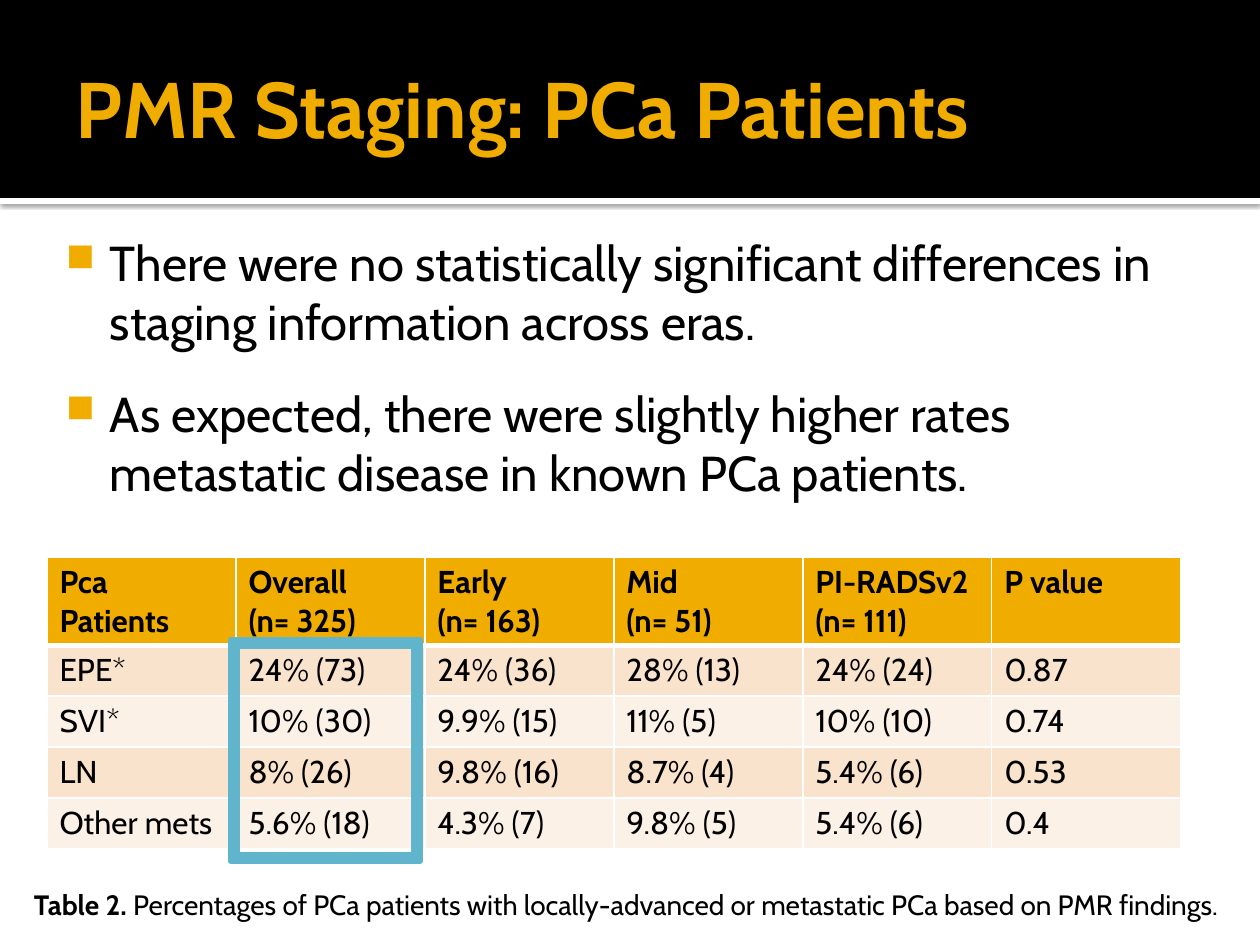
from dataclasses import dataclass

from lxml import etree
from pptx import Presentation
from pptx import util as u
from pptx.dml.color import RGBColor
from pptx.enum import shapes, text
from pptx.oxml.ns import qn

PX = u.Inches(1) // 126


@dataclass(frozen=True)
class Theme:
    font: str = "Cabin"
    black: str = "000000"
    white: str = "FFFFFF"
    gold: str = "F0AD00"
    blue: str = "60B5CC"
    bands: tuple = ("F9E3CC", "FCF1E7")
    title: int = 45
    body: int = 28
    cell: int = 18
    caption: int = 16


T = Theme()

BULLETS = [
    "There were no statistically significant differences in staging information across eras.",
    "As expected, there were slightly higher rates metastatic disease in known PCa patients.",
]
STAGING = [
    ["Pca Patients", "Overall\n(n= 325)", "Early\n(n= 163)", "Mid\n(n= 51)",
     "PI-RADSv2 (n= 111)", "P value"],
    ["EPE*", "24% (73)", "24% (36)", "28% (13)", "24% (24)", "0.87"],
    ["SVI*", "10% (30)", "9.9% (15)", "11% (5)", "10% (10)", "0.74"],
    ["LN", "8% (26)", "9.8% (16)", "8.7% (4)", "5.4% (6)", "0.53"],
    ["Other mets", "5.6% (18)", "4.3% (7)", "9.8% (5)", "5.4% (6)", "0.4"],
]


def px(*values):
    return [v * PX for v in values]


def rgb(color):
    return RGBColor.from_string(color)


def sub(parent, tag, **attrs):
    return etree.SubElement(parent, qn(tag), {k: str(v) for k, v in attrs.items()})


def style(r, size, color=T.black, bold=False):
    r.font.name = T.font
    r.font.size = u.Pt(size)
    r.font.bold = bold
    r.font.color.rgb = rgb(color)


def add_shape(s, kind, box, color):
    sp = s.shapes.add_shape(kind, *px(*box))
    sp.shadow.inherit = False
    sp.fill.solid()
    sp.fill.fore_color.rgb = rgb(color)
    sp.line.fill.background()
    return sp


def add_text_box(s, box, margins, anchor=text.MSO_ANCHOR.TOP):
    """Margins are left, top, right, bottom."""
    tf = s.shapes.add_textbox(*px(*box)).text_frame
    tf.word_wrap = True
    tf.vertical_anchor = anchor
    tf.margin_left, tf.margin_top, tf.margin_right, tf.margin_bottom = px(*margins)
    return tf


def add_header(s):
    rect = shapes.MSO_SHAPE.RECTANGLE
    rule = add_shape(s, rect, (0, 198, 1260, 6), T.white)
    effects = rule._element.spPr.find(qn("a:effectLst"))
    shadow = sub(effects, "a:outerShdw", blurRad=u.Pt(2.5), dist=u.Pt(0.8),
                 dir=90 * 60000, algn="t", rotWithShape=0)
    sub(sub(shadow, "a:srgbClr", val=T.black), "a:alpha", val=60000)
    add_shape(s, rect, (0, 0, 1260, 198), T.black)

    tf = add_text_box(s, (63, 21, 1134, 173), (13, 6, 6, 6), text.MSO_ANCHOR.MIDDLE)
    tf.text = "PMR Staging: PCa Patients"
    style(tf.paragraphs[0].runs[0], T.title, T.gold, True)


def add_bullets(s):
    tf = add_text_box(s, (42, 220, 1134, 300), (8, 13, 13, 6))
    tf.text = "\n".join(BULLETS)
    for i, p in enumerate(tf.paragraphs):
        if i:
            p.space_before = u.Pt(19)
        style(p.runs[0], T.body)
        pPr = p._p.get_or_add_pPr()
        pPr.set("marL", str(60 * PX))
        pPr.set("indent", str(-44 * PX))
        sub(sub(pPr, "a:buClr"), "a:srgbClr", val=T.gold)
        sub(pPr, "a:buSzPct", val=80000)
        sub(pPr, "a:buChar", char="■")


def set_borders(cell, **widths):
    """Widths in points by side, in the order L, R, T, B."""
    tcPr = cell._tc.get_or_add_tcPr()
    for side, width in widths.items():
        ln = sub(tcPr, f"a:ln{side}", w=u.Pt(width))
        sub(sub(ln, "a:solidFill"), "a:srgbClr", val=T.white)


def add_staging_table(s):
    heights = [88] + [51] * (len(STAGING) - 1)
    cols = len(STAGING[0])
    table = s.shapes.add_table(len(STAGING), cols,
                               *px(47, 557, 189 * cols, sum(heights))).table
    table.first_row = table.horz_banding = False
    for i, row in enumerate(STAGING):
        table.rows[i].height = heights[i] * PX
        for j, value in enumerate(row):
            cell = table.cell(i, j)
            set_borders(cell, L=1, R=1, T=3 if i == 1 else 1, B=3 if i == 0 else 1)
            cell.fill.solid()
            cell.fill.fore_color.rgb = rgb(T.bands[(i - 1) % 2] if i else T.gold)
            cell.text = value
            for p in cell.text_frame.paragraphs:
                style(p.runs[0], T.cell, bold=i == 0)


def add_caption(s):
    tf = add_text_box(s, (21, 882, 1239, 47), (13, 6, 13, 6))
    p = tf.paragraphs[0]
    for words, bold in (
        ("Table 2. ", True),
        ("Percentages of PCa patients with locally-advanced or metastatic PCa "
         "based on PMR findings.", False),
    ):
        r = p.add_run()
        r.text = words
        style(r, T.caption, bold=bold)


def add_highlight(s):
    sp = add_shape(s, shapes.MSO_SHAPE.FRAME, (231, 640, 189, 221), T.blue)
    sp.adjustments[0] = 0.03
    sp.line.color.rgb = rgb(T.blue)
    sp.line.width = u.Pt(3.78)


def main():
    prs = Presentation()
    prs.slide_width, prs.slide_height = px(1260, 945)
    s = prs.slides.add_slide(prs.slide_layouts[6])
    add_header(s)
    add_staging_table(s)
    add_caption(s)
    add_highlight(s)
    add_bullets(s)
    prs.save("out.pptx")


if __name__ == "__main__":
    main()
